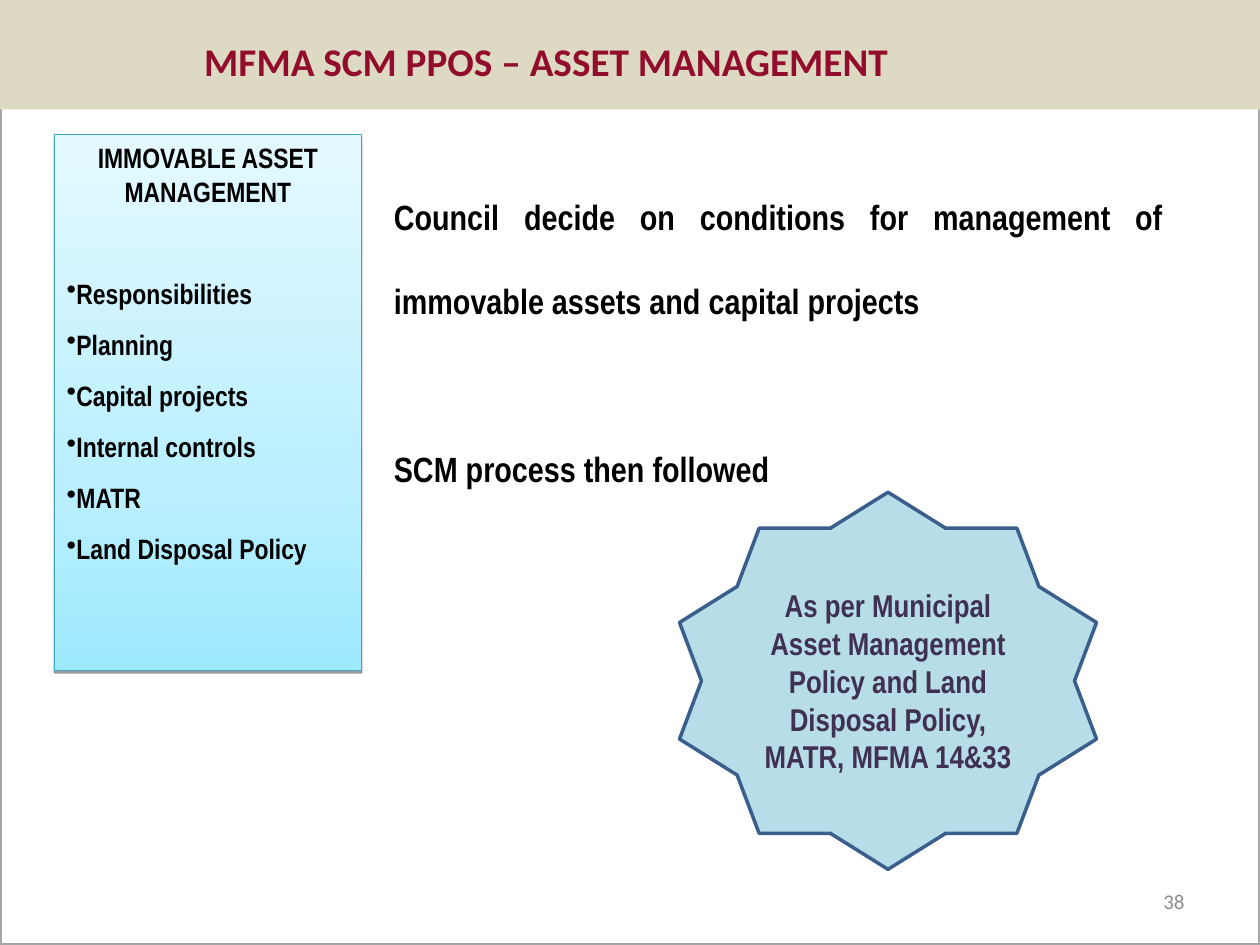
from copy import deepcopy

from lxml import etree
from pptx import Presentation
from pptx.dml.color import RGBColor
from pptx.enum.shapes import MSO_SHAPE
from pptx.enum.text import MSO_ANCHOR, MSO_AUTO_SIZE, PP_ALIGN
from pptx.oxml.ns import qn
from pptx.util import Pt

RECTANGLE, STAR = MSO_SHAPE.RECTANGLE, MSO_SHAPE.STAR_10_POINT
TOP, MIDDLE = MSO_ANCHOR.TOP, MSO_ANCHOR.MIDDLE
LEFT, CENTER, RIGHT, JUSTIFY = (
    PP_ALIGN.LEFT, PP_ALIGN.CENTER, PP_ALIGN.RIGHT, PP_ALIGN.JUSTIFY)

NARROW, SANS = "Arial Narrow", "Calibri"
BLACK = "000000"


def color(hex_string):
    return RGBColor.from_string(hex_string)


class SlideBuilder:
    """Holds the text style and current slide; lengths are in points."""

    def __init__(self, page, font, tone):
        self.page = page
        self.font = font
        self.tone = tone

    def shape(self, kind, area, fill=None, line=None, line_width=0):
        box = self.page.shapes.add_shape(kind, *map(Pt, area))
        box.shadow.inherit = False
        if fill:
            box.fill.solid()
            box.fill.fore_color.rgb = color(fill)
        else:
            box.fill.background()
        if line:
            box.line.color.rgb = color(line)
            box.line.width = Pt(line_width)
        else:
            box.line.fill.background()
        return box

    def gradient(self, box, stops, angle):
        box.fill.gradient()
        box.fill.gradient_angle = angle
        stop_list = next(box.element.iter(qn("a:gsLst")))
        while len(stop_list) < len(stops):
            stop_list.append(deepcopy(stop_list[0]))
        for stop, (position, tone) in zip(box.fill.gradient_stops, stops):
            stop.position = position
            stop.color.rgb = color(tone)

    def drop_shadow(self, box, distance, opacity):
        effects = next(box.element.iter(qn("a:effectLst")))
        shadow = etree.SubElement(
            effects, qn("a:outerShdw"), blurRad="0", dist=str(int(Pt(distance))),
            dir="5400000", rotWithShape="0")
        tone = etree.SubElement(shadow, qn("a:srgbClr"), val=BLACK)
        etree.SubElement(tone, qn("a:alpha"), val=str(opacity * 1000))

    def text_box(self, area):
        return self.page.shapes.add_textbox(*map(Pt, area))

    def title(self, area, behind):
        box = self.page.shapes.title
        box.left, box.top, box.width, box.height = map(Pt, area)
        behind.element.addnext(box.element)
        return box

    def set_text(self, box, lines, size, tone=None, font=None, bold=True,
                 align=LEFT, anchor=MIDDLE):
        frame = box.text_frame
        frame.word_wrap = True
        frame.auto_size = MSO_AUTO_SIZE.NONE
        frame.vertical_anchor = anchor
        frame.text = "\n".join(lines)
        for para in frame.paragraphs:
            para.alignment = align
            para.font.name = font or self.font
            para.font.size = Pt(size)
            para.font.bold = bold
            para.font.color.rgb = color(tone or self.tone)
        return frame.paragraphs

    def bullet(self, para):
        properties = para._p.get_or_add_pPr()
        properties.set("marL", "0")
        properties.set("indent", "0")
        mark = etree.Element(qn("a:buChar"), char="•")
        properties.find(qn("a:defRPr")).addprevious(mark)


def main():
    deck = Presentation()
    deck.slide_width, deck.slide_height = Pt(720), Pt(540)
    page = deck.slides.add_slide(deck.slide_layouts[5])
    builder = SlideBuilder(page, NARROW, BLACK)

    # Page frame and slide number
    builder.shape(RECTANGLE, (0, 60.5, 720, 479.5), line="A6A6A6", line_width=2)
    number = builder.text_box((516, 500.5, 168, 28.75))
    builder.set_text(number, ["38"], 12, "8C8C8C", SANS, bold=False, align=RIGHT)

    # Topic panel with its bullet list
    panel = builder.shape(RECTANGLE, (31, 77, 175.7, 306),
                          line="40A7C2", line_width=0.75)
    builder.gradient(
        panel, [(0, "9EEAFF"), (0.35, "BBEFFF"), (1, "E4F9FF")], angle=90)
    builder.drop_shadow(panel, distance=1.6, opacity=38)
    heading, *topics = builder.set_text(
        panel,
        ["IMMOVABLE ASSET MANAGEMENT", "Responsibilities", "Planning",
         "Capital projects", "Internal controls", "MATR",
         "Land Disposal Policy"],
        16, anchor=TOP)
    heading.alignment = CENTER
    heading.space_after = Pt(39)
    for topic in topics:
        topic.space_after = Pt(10)
        builder.bullet(topic)

    # Title band
    band = builder.shape(RECTANGLE, (0, 0, 720, 62.5), fill="DDD9C3")
    title = builder.title((109.5, 15, 437, 39.6), behind=band)
    builder.set_text(title, ["MFMA SCM PPOS – ASSET MANAGEMENT"],
                     22.4, "920D2C", SANS)

    # Policy star
    star = builder.shape(STAR, (388.3, 281.3, 238.3, 215.5),
                         fill="B7DEE8", line="3A5F8C", line_width=2)
    builder.set_text(
        star,
        ["As per Municipal Asset Management Policy and Land Disposal Policy, "
         "MATR, MFMA 14&33"],
        18, "403152", align=CENTER)

    # Main statement
    statement = builder.text_box((218, 83, 453.6, 201))
    decision, process = builder.set_text(
        statement,
        ["Council decide on conditions for management of immovable assets "
         "and capital projects", "SCM process then followed"],
        20, align=JUSTIFY)
    decision.line_spacing = process.line_spacing = 2.0
    process.space_before = Pt(48)

    deck.save("out.pptx")


if __name__ == "__main__":
    main()
